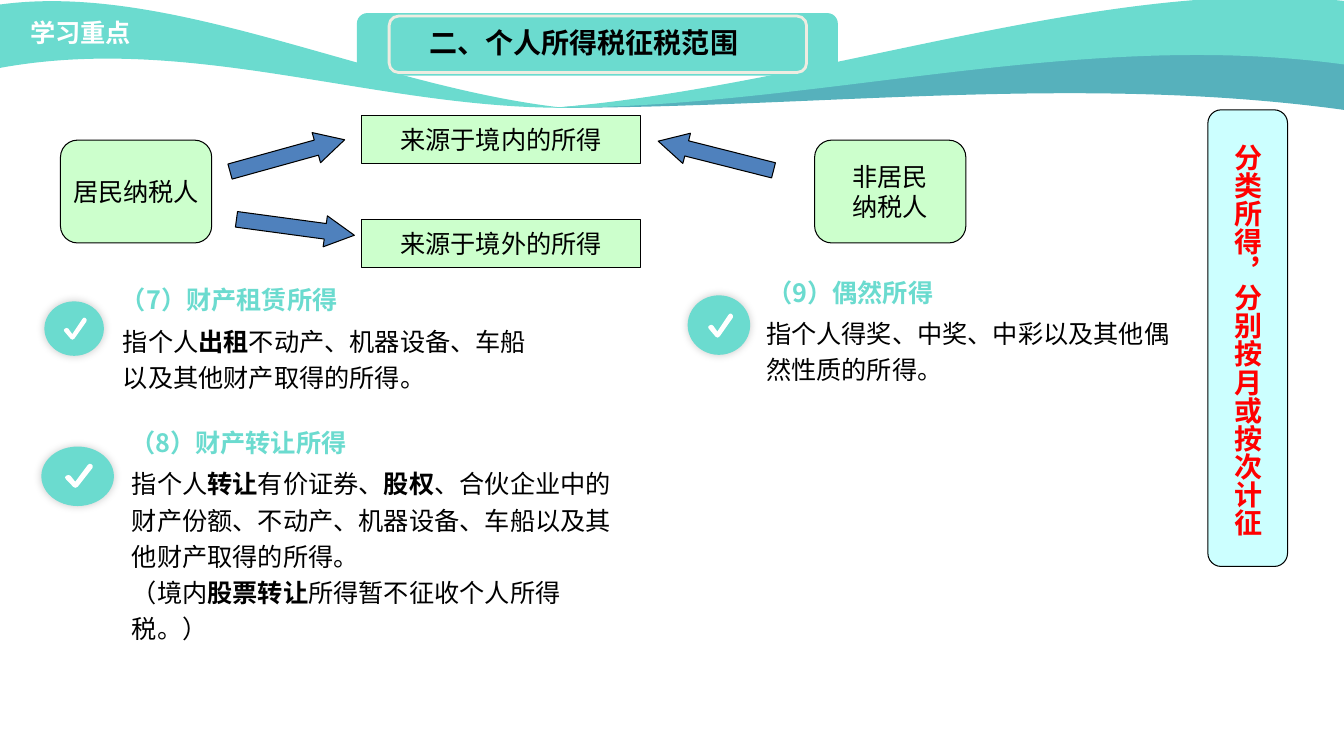
"""Builds the slide on the scope of personal income tax."""
from lxml.etree import SubElement
from pptx import Presentation
from pptx.dml.color import RGBColor
from pptx.enum.shapes import MSO_SHAPE
from pptx.enum.text import MSO_ANCHOR, MSO_AUTO_SIZE, PP_ALIGN
from pptx.oxml.ns import qn
from pptx.util import Inches, Pt

TEAL, BLUE, GREEN = "6BDBCF", "4F81BD", "CCFFCC"
CJK = "Noto Sans CJK SC"

prs = Presentation()
prs.slide_width, prs.slide_height = Inches(13.33), Inches(7.5)
s = prs.slides.add_slide(prs.slide_layouts[5])


def add_box(kind, x, y, w, h, fill, line=None, width=0.75):
    sp = s.shapes.add_shape(kind, Inches(x), Inches(y), Inches(w), Inches(h))
    sp.shadow.inherit = False
    sp.fill.solid()
    sp.fill.fore_color.rgb = RGBColor.from_string(fill)
    if line:
        sp.line.color.rgb = RGBColor.from_string(line)
        sp.line.width = Pt(width)
    else:
        sp.line.fill.background()
    return sp


def write(tf, text, size=18, color="000000", bold=False, font="Arial",
          align=PP_ALIGN.LEFT, spacing=None):
    """Fill a text frame; asterisks enclose bold words and \\v breaks a line."""
    tf.text = text.split("*")[0]
    p = tf.paragraphs[0]
    for i, part in enumerate(text.split("*")[1:]):
        for j, chunk in enumerate(part.split("\v")):
            if j:
                p.add_line_break()
            r = p.add_run()
            r.text, r.font.bold = chunk, i % 2 == 0
    for p in tf.paragraphs:
        p.alignment, p.line_spacing = align, spacing
        for r in p.runs:
            r.font.size, r.font.name = Pt(size), font
            r.font.bold = bold or bool(r.font.bold)
            r.font.color.rgb = RGBColor.from_string(color)
            SubElement(r.font._element, qn("a:ea"), typeface=CJK)


outlines = [
    (5.49, 0.4, 7.84, 0.69, "56B1BC",
     [[(5.49, 1.07)], [(8.12, 0.86), (10.97, 0.2), (13.33, 0.46)],
      [(13.33, 1.09)], [(10.7, 0.73), (8.12, 1.07), (5.49, 1.07)]]),
    (5.48, -0.03, 7.85, 1.1, TEAL,
     [[(5.48, 1.07)], [(8.11, 0.86), (10.97, -0.25), (13.33, 0.01)],
      [(13.33, 0.64)], [(10.7, 0.28), (8.11, 1.07), (5.48, 1.07)]]),
    (-0.03, 0.01, 5.63, 1.06, TEAL,
     [[(5.59, 1.07)], [(3.69, 0.86), (1.68, -0.2), (-0.03, 0.05)],
      [(-0.03, 0.68)], [(1.87, 0.32), (3.69, 1.07), (5.59, 1.07)]]),
]
badges = [
    (0.44, 2.99, 0.59, 0.54, 0.63, 3.15, 0.23, 0.22),
    (6.82, 2.93, 0.62, 0.59, 7.02, 3.11, 0.25, 0.24),
    (0.41, 4.43, 0.72, 0.59, 0.64, 4.6, 0.28, 0.24),
]
tick = [[(0.39, 1)], [(0.36, 1), (0.33, 0.99), (0.31, 0.96)], [(0.04, 0.63)],
        [(0, 0.58), (0.01, 0.53), (0.06, 0.5)], [(0.11, 0.46), (0.17, 0.46), (0.21, 0.5)],
        [(0.38, 0.75)], [(0.82, 0.06)], [(0.85, 0), (0.91, -0.01), (0.95, 0.02)],
        [(1, 0.06), (1.02, 0.12), (0.99, 0.18)], [(0.47, 0.95)],
        [(0.45, 0.98), (0.42, 1), (0.39, 1)]]
for x, y, w, h, tx, ty, tw, th in badges:
    sp = add_box(MSO_SHAPE.OVAL, x, y, w, h, TEAL)
    shadow = SubElement(sp._element.spPr.find(qn("a:effectLst")), qn("a:outerShdw"),
                        blurRad=str(Pt(6)), dist="0", dir="18900000")
    black = SubElement(shadow, qn("a:srgbClr"), val="000000")
    SubElement(black, qn("a:alpha"), val="20000")
    mark = [[(tx + u * tw, ty + v * th) for u, v in step] for step in tick]
    outlines.append((tx, ty, tw, th, "FFFFFF", mark))

for x, y, w, h, fill, steps in outlines:
    builder = s.shapes.build_freeform(Inches(x), Inches(y), scale=1.0)
    builder.add_line_segments([(Inches(x + w), Inches(y)), (Inches(x + w), Inches(y + h))])
    sp = builder.convert_to_shape()
    sp.shadow.inherit = False
    sp.fill.solid()
    sp.fill.fore_color.rgb = RGBColor.from_string(fill)
    sp.line.fill.background()
    outline = next(sp._element.iter(qn("a:path")))
    for child in list(outline):
        outline.remove(child)
    for i, step in enumerate(steps):
        tag = "a:moveTo" if i == 0 else "a:lnTo" if len(step) == 1 else "a:cubicBezTo"
        node = SubElement(outline, qn(tag))
        for px, py in step:
            SubElement(node, qn("a:pt"), x=str(Inches(px - x)), y=str(Inches(py - y)))
    SubElement(outline, qn("a:close"))

nodes = [
    (MSO_SHAPE.ROUNDED_RECTANGLE, 0.6, 1.39, 1.5, 1.02, "居民纳税人"),
    (MSO_SHAPE.ROUNDED_RECTANGLE, 8.08, 1.39, 1.5, 1.02, "非居民\n纳税人"),
    (MSO_SHAPE.RECTANGLE, 3.59, 1.15, 2.76, 0.47, "来源于境内的所得"),
    (MSO_SHAPE.RECTANGLE, 3.59, 2.18, 2.76, 0.47, "来源于境外的所得"),
]
for kind, x, y, w, h, text in nodes:
    tf = add_box(kind, x, y, w, h, GREEN, "000000").text_frame
    tf.word_wrap, tf.vertical_anchor = False, MSO_ANCHOR.MIDDLE
    write(tf, text, align=PP_ALIGN.CENTER)

for x, y, angle in [(2.26, 1.39, 344.5), (2.34, 2.1, 7.7), (6.51, 1.39, 194.2)]:
    sp = add_box(MSO_SHAPE.RIGHT_ARROW, x, y, 1.18, 0.31, BLUE, "000000")
    sp.adjustments[1] = 0.94
    sp.rotation = angle

add_box(MSO_SHAPE.ROUNDED_RECTANGLE, 11.98, 1.09, 0.79, 4.53, "CCFFFF", "000000")
add_box(MSO_SHAPE.ROUNDED_RECTANGLE, 3.54, 0.13, 4.77, 0.62, TEAL)
add_box(MSO_SHAPE.ROUNDED_RECTANGLE, 3.86, 0.16, 4.14, 0.56, TEAL, "EEECE1", 2)

heading = dict(color=TEAL, bold=True, font=CJK)
body = dict(spacing=1.2)
texts = [
    (0.2, 0.12, 1.89, 0.4, "学习重点", dict(color="FFFFFF", bold=True, font=CJK)),
    (1.0, 2.72, 3.32, 0.5, "（7）财产租赁所得", heading),
    (1.12, 3.13, 4.25, 0.79, "指个人*出租*不动产、机器设备、车船以及其他财产取得的所得。", body),
    (1.09, 4.14, 4.76, 0.81, "（8）财产转让所得", heading),
    (1.21, 4.54, 5.15, 1.56, "指个人*转让*有价证券、*股权*、合伙企业中的财产份额、不动产、机器设备、"
     "车船以及其他财产取得的所得。\v（境内*股票转让*所得暂不征收个人所得税。）", body),
    (7.41, 2.65, 4.1, 0.5, "（9）偶然所得", heading),
    (7.5, 3.05, 4.44, 1.19, "指个人得奖、中奖、中彩以及其他偶然性质的所得。", body),
    (12.05, 1.33, 0.54, 4.15, "分类所得，分别按月或按次计征",
     dict(size=20, color="FF0000", bold=True)),
]
for x, y, w, h, text, style in texts:
    tf = s.shapes.add_textbox(Inches(x), Inches(y), Inches(w), Inches(h)).text_frame
    tf.word_wrap = True
    if style is heading:
        tf.margin_left = tf.margin_right = Inches(0.2)
        tf.margin_top = tf.margin_bottom = Inches(0.1)
    write(tf, text, **style)
tf._txBody.bodyPr.set("vert", "eaVert")

title = s.shapes.title
title.left, title.top = Inches(4.16), Inches(0.2)
title.width, title.height = Inches(3.52), Inches(0.77)
tf = title.text_frame
tf.auto_size, tf.vertical_anchor = MSO_AUTO_SIZE.NONE, MSO_ANCHOR.TOP
write(tf, "二、个人所得税征税范围", size=20, bold=True)
title.element.getparent().append(title.element)

prs.save("out.pptx")
